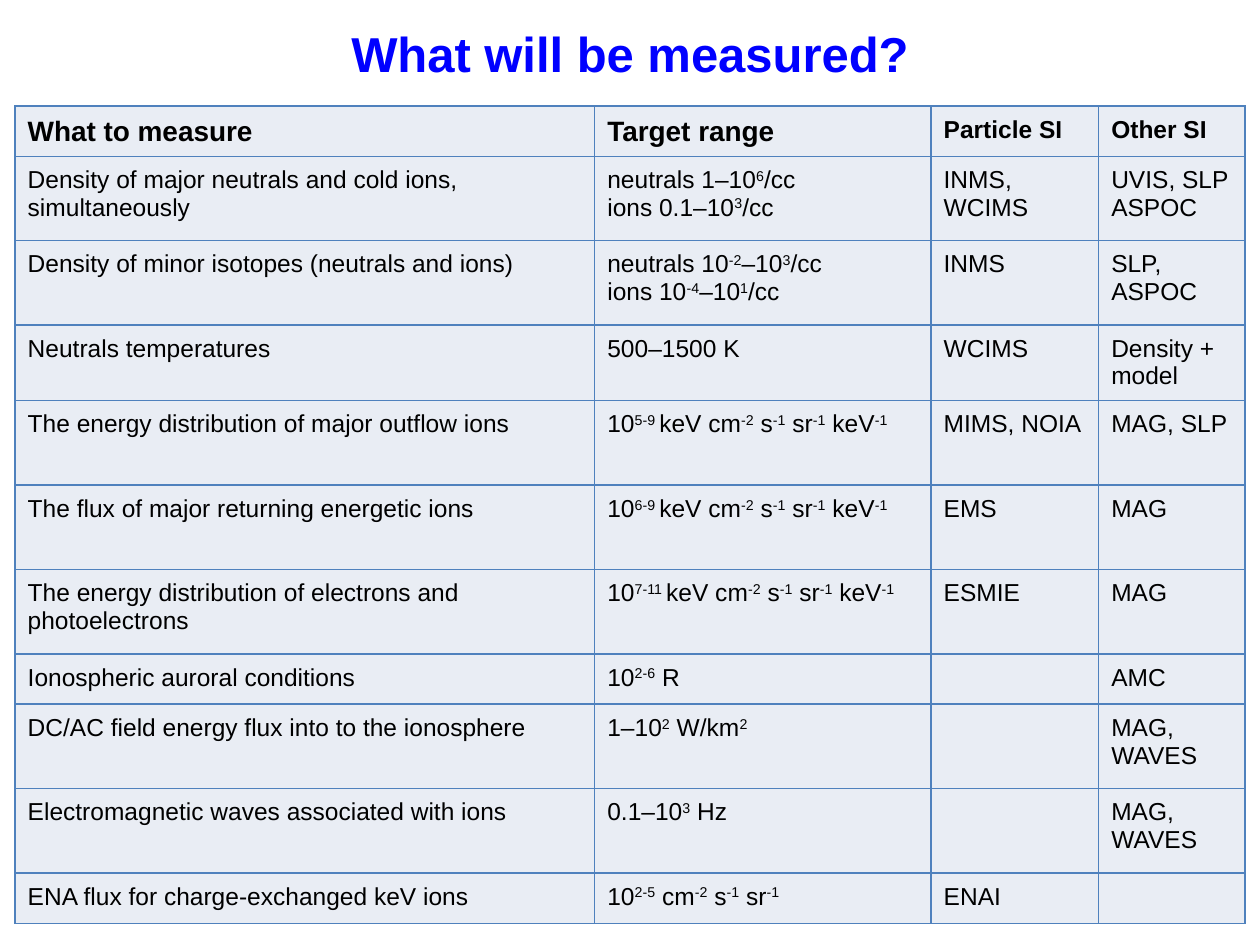
from dataclasses import dataclass

from lxml.etree import SubElement
from pptx import Presentation
from pptx.dml.color import RGBColor
from pptx.enum.text import MSO_ANCHOR, PP_ALIGN
from pptx.oxml.ns import qn
from pptx.util import Inches, Pt


@dataclass(frozen=True)
class Theme:
    font: str = "Arial"
    title_color: RGBColor = RGBColor(0x00, 0x00, 0xFF)
    text_color: RGBColor = RGBColor(0x00, 0x00, 0x00)
    cell_fill: RGBColor = RGBColor(0xE9, 0xED, 0xF4)
    border: str = "4F81BD"
    title_size: int = 28
    heading_size: int = 16
    body_size: int = 14


THEME = Theme()

COLUMN_WIDTHS = [4.6, 2.67, 1.33, 1.16]
ROW_HEIGHTS = [0.4, 0.67, 0.67, 0.6, 0.67, 0.67, 0.67, 0.4, 0.67, 0.67, 0.4]

# Text between a pair of carets is superscript; a newline starts a paragraph.
FLUX_UNIT = "keV cm^-2^ s^-1^ sr^-1^ keV^-1^"
ROWS = [
    ("What to measure", "Target range", "Particle SI", "Other SI"),
    ("Density of major neutrals and cold ions, simultaneously",
     "neutrals 1–10^6^/cc\nions 0.1–10^3^/cc", "INMS, WCIMS", "UVIS, SLP ASPOC"),
    ("Density of minor isotopes (neutrals and ions)",
     "neutrals 10^-2^–10^3^/cc\nions 10^-4^–10^1^/cc", "INMS", "SLP, ASPOC"),
    ("Neutrals temperatures", "500–1500 K", "WCIMS", "Density + model"),
    ("The energy distribution of major outflow ions",
     "10^5-9 ^" + FLUX_UNIT, "MIMS, NOIA", "MAG, SLP"),
    ("The flux of major returning energetic ions",
     "10^6-9 ^" + FLUX_UNIT, "EMS", "MAG"),
    ("The energy distribution of electrons and photoelectrons",
     "10^7-11 ^" + FLUX_UNIT, "ESMIE", "MAG"),
    ("Ionospheric auroral conditions", "10^2-6^ R", "", "AMC"),
    ("DC/AC field energy flux into to the ionosphere",
     "1–10^2^ W/km^2^", "", "MAG, WAVES"),
    ("Electromagnetic waves associated with ions",
     "0.1–10^3^ Hz", "", "MAG, WAVES"),
    ("ENA flux for charge-exchanged keV ions",
     "10^2-5^ cm^-2^ s^-1^ sr^-1^", "ENAI", ""),
]


def write_text(frame, text, size, color, bold):
    """Fill a text frame, raising the parts that stand between carets."""
    for index, line in enumerate(text.split("\n")):
        paragraph = frame.add_paragraph() if index else frame.paragraphs[0]
        font = paragraph.font
        font.name, font.size, font.bold = THEME.font, Pt(size), bold
        font.color.rgb = color
        for position, part in enumerate(line.split("^")):
            if part:
                run = paragraph.add_run()
                run.text = part
                if position % 2:
                    run.font._element.set("baseline", "30000")


def style_cell(cell):
    """Set the insets, borders and fill of a table cell."""
    cell.margin_left = cell.margin_right = Inches(0.1)
    cell.margin_top, cell.margin_bottom = Inches(0.08), 0
    properties = cell._tc.get_or_add_tcPr()
    for side in ("a:lnL", "a:lnR", "a:lnT", "a:lnB"):
        line = SubElement(properties, qn(side), w=str(Pt(1)))
        line_fill = SubElement(line, qn("a:solidFill"))
        SubElement(line_fill, qn("a:srgbClr"), val=THEME.border)
    cell.fill.solid()
    cell.fill.fore_color.rgb = THEME.cell_fill


presentation = Presentation()
presentation.slide_width = Inches(10)
presentation.slide_height = Inches(7.5)
slide = presentation.slides.add_slide(presentation.slide_layouts[6])

title = slide.shapes.add_textbox(Inches(0.5), 0, Inches(9), Inches(0.84)).text_frame
title.word_wrap = True
title.vertical_anchor = MSO_ANCHOR.MIDDLE
write_text(title, "What will be measured?", THEME.title_size, THEME.title_color, True)
title.paragraphs[0].alignment = PP_ALIGN.CENTER

table = slide.shapes.add_table(
    len(ROWS), len(COLUMN_WIDTHS), Inches(0.12), Inches(0.84),
    Inches(sum(COLUMN_WIDTHS)), Inches(sum(ROW_HEIGHTS)),
).table
table.first_row = table.horz_banding = False
for column, width in zip(table.columns, COLUMN_WIDTHS):
    column.width = Inches(width)

for row_index, (row, height, texts) in enumerate(zip(table.rows, ROW_HEIGHTS, ROWS)):
    row.height = Inches(height)
    is_header = row_index == 0
    for column_index, (cell, text) in enumerate(zip(row.cells, texts)):
        large = is_header and column_index < 2
        size = THEME.heading_size if large else THEME.body_size
        style_cell(cell)
        write_text(cell.text_frame, text, size, THEME.text_color, is_header)

presentation.save("out.pptx")
